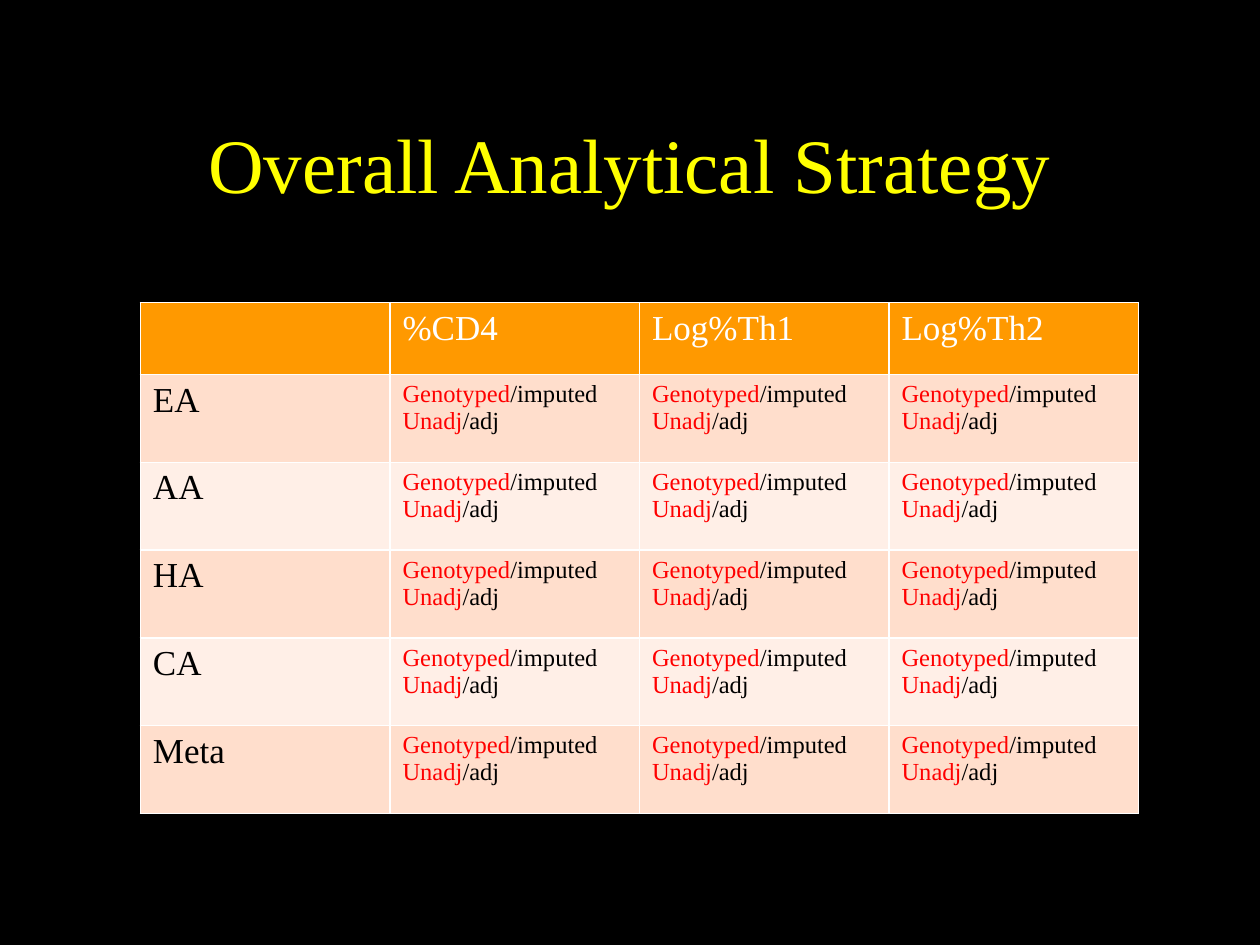
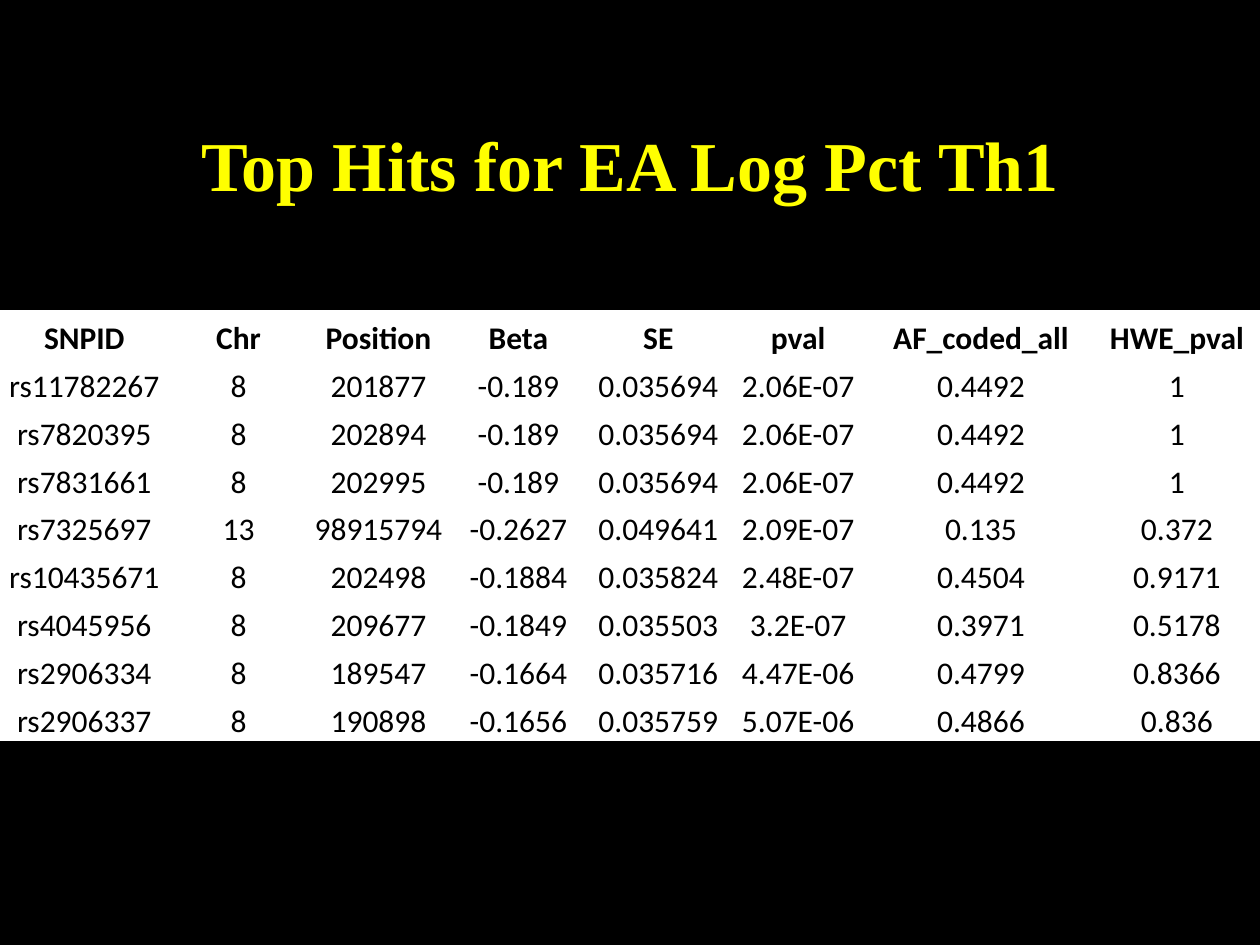
import lxml.etree
import pptx
import pptx.dml.color
import pptx.enum.text
import pptx.oxml.ns
import pptx.util

Cm = pptx.util.Cm
Pt = pptx.util.Pt
ALIGN = pptx.enum.text.PP_ALIGN
ANCHOR = pptx.enum.text.MSO_ANCHOR

COLORS = {
    "background": "000000",
    "title": "FFFF00",
    "header": "FF9900",
    "band_dark": "FFDECC",
    "band_light": "FFEFE7",
    "light": "FFFFFF",
    "dark": "000000",
    "accent": "FF0000",
}
SERIF = "Times New Roman"
SANS = "Calibri"
PLAIN_TABLE_STYLE = "{2D5ABB26-0587-4C30-8999-92F81FD0307C}"
TITLE_BOX = (1.9, 1.7, 21.6, 3.18)

TRAITS = ["%CD4", "Log%Th1", "Log%Th2"]
COHORTS = ["EA", "AA", "HA", "CA", "Meta"]
ANALYSES = [("Genotyped", "/imputed"), ("Unadj", "/adj")]
STRATEGY_BOX = (2.83, 6.1, 20.12, 10.3)
STRATEGY_HEADER_HEIGHT = 1.45

HIT_HEADINGS = ["SNPID", "Chr", "Position", "Beta", "SE", "pval", "AF_coded_all", "HWE_pval"]
HITS = [
    ["rs11782267", "8", "201877", "-0.189", "0.035694", "2.06E-07", "0.4492", "1"],
    ["rs7820395", "8", "202894", "-0.189", "0.035694", "2.06E-07", "0.4492", "1"],
    ["rs7831661", "8", "202995", "-0.189", "0.035694", "2.06E-07", "0.4492", "1"],
    ["rs7325697", "13", "98915794", "-0.2627", "0.049641", "2.09E-07", "0.135", "0.372"],
    ["rs10435671", "8", "202498", "-0.1884", "0.035824", "2.48E-07", "0.4504", "0.9171"],
    ["rs4045956", "8", "209677", "-0.1849", "0.035503", "3.2E-07", "0.3971", "0.5178"],
    ["rs2906334", "8", "189547", "-0.1664", "0.035716", "4.47E-06", "0.4799", "0.8366"],
    ["rs2906337", "8", "190898", "-0.1656", "0.035759", "5.07E-06", "0.4866", "0.836"],
]
HITS_BOX = (0, 6.25, 25.4, 8.69)
HIT_WIDTHS = [3.4] + [2.82] * 5 + [4.55, 3.35]


def rgb(name):
    return pptx.dml.color.RGBColor.from_string(COLORS[name])


def set_values(target, values):
    for name, value in values.items():
        setattr(target, name, value)


def add_span(para, text, color, **values):
    span = para.add_run()
    span.text = text
    span.font.color.rgb = rgb(color)
    set_values(span.font, values)


def add_page(deck, title, **values):
    page = deck.slides.add_slide(deck.slide_layouts[6])
    page.background.fill.solid()
    page.background.fill.fore_color.rgb = rgb("background")
    frame = page.shapes.add_textbox(*map(Cm, TITLE_BOX)).text_frame
    set_values(frame, {"word_wrap": True, "vertical_anchor": ANCHOR.MIDDLE})
    para = frame.paragraphs[0]
    para.alignment = ALIGN.CENTER
    add_span(para, title, "title", name=SERIF, **values)
    return page


def add_plain_table(page, box, widths, heights):
    graphic = page.shapes.add_table(len(heights), len(widths), *map(Cm, box))
    table = graphic.table
    set_values(table, {"first_row": False, "horz_banding": False})
    style = table._tbl.tblPr.find(pptx.oxml.ns.qn("a:tableStyleId"))
    style.text = PLAIN_TABLE_STYLE
    for column, width in zip(table.columns, widths):
        column.width = Cm(width)
    for row, height in zip(table.rows, heights):
        row.height = Cm(height)
    return table


def fill_cell(cell, color):
    cell.fill.solid()
    cell.fill.fore_color.rgb = rgb(color)


def add_borders(cell, color, width):
    qn = pptx.oxml.ns.qn
    properties = cell._tc.get_or_add_tcPr()
    for side in ("a:lnL", "a:lnR", "a:lnT", "a:lnB"):
        line = lxml.etree.SubElement(properties, qn(side), w=str(Pt(width)))
        fill = lxml.etree.SubElement(line, qn("a:solidFill"))
        lxml.etree.SubElement(fill, qn("a:srgbClr"), val=COLORS[color])


def add_strategy_table(page, box):
    columns = len(TRAITS) + 1
    body_height = (box[3] - STRATEGY_HEADER_HEIGHT) / len(COHORTS)
    heights = [STRATEGY_HEADER_HEIGHT] + [body_height] * len(COHORTS)
    table = add_plain_table(page, box, [box[2] / columns] * columns, heights)
    label = {"name": SERIF, "size": Pt(20)}
    detail = {"name": SERIF, "size": Pt(14)}

    for index, row in enumerate(table.rows):
        band = "header" if index == 0 else ("band_light", "band_dark")[index % 2]
        for cell in row.cells:
            add_borders(cell, "light", 1)
            fill_cell(cell, band)
    for column, trait in enumerate(TRAITS, 1):
        add_span(table.cell(0, column).text_frame.paragraphs[0], trait, "light", **label)
    for row, cohort in enumerate(COHORTS, 1):
        add_span(table.cell(row, 0).text_frame.paragraphs[0], cohort, "dark", **label)
        for column in range(1, columns):
            frame = table.cell(row, column).text_frame
            for line, (main, other) in enumerate(ANALYSES):
                para = frame.add_paragraph() if line else frame.paragraphs[0]
                add_span(para, main, "accent", **detail)
                add_span(para, other, "dark", **detail)


def add_hits_table(page, box):
    rows = [HIT_HEADINGS] + HITS
    table = add_plain_table(page, box, HIT_WIDTHS, [box[3] / len(rows)] * len(rows))
    layout = {
        "vertical_anchor": ANCHOR.BOTTOM,
        "margin_left": Cm(0.02),
        "margin_right": Cm(0.02),
        "margin_top": Cm(0.02),
        "margin_bottom": 0,
    }
    for index, values in enumerate(rows):
        for cell, value in zip(table.rows[index].cells, values):
            set_values(cell, layout)
            fill_cell(cell, "light")
            para = cell.text_frame.paragraphs[0]
            para.alignment = ALIGN.CENTER
            add_span(para, value, "dark", name=SANS, size=Pt(18), bold=index == 0)


def main():
    deck = pptx.Presentation()
    set_values(deck, {"slide_width": Cm(25.4), "slide_height": Cm(19.05)})
    strategy = add_page(deck, "Overall Analytical Strategy", size=Pt(44))
    add_strategy_table(strategy, STRATEGY_BOX)
    hits = add_page(deck, "Top Hits for EA Log Pct Th1", size=Pt(40), bold=True)
    add_hits_table(hits, HITS_BOX)
    deck.save("out.pptx")


if __name__ == "__main__":
    main()
